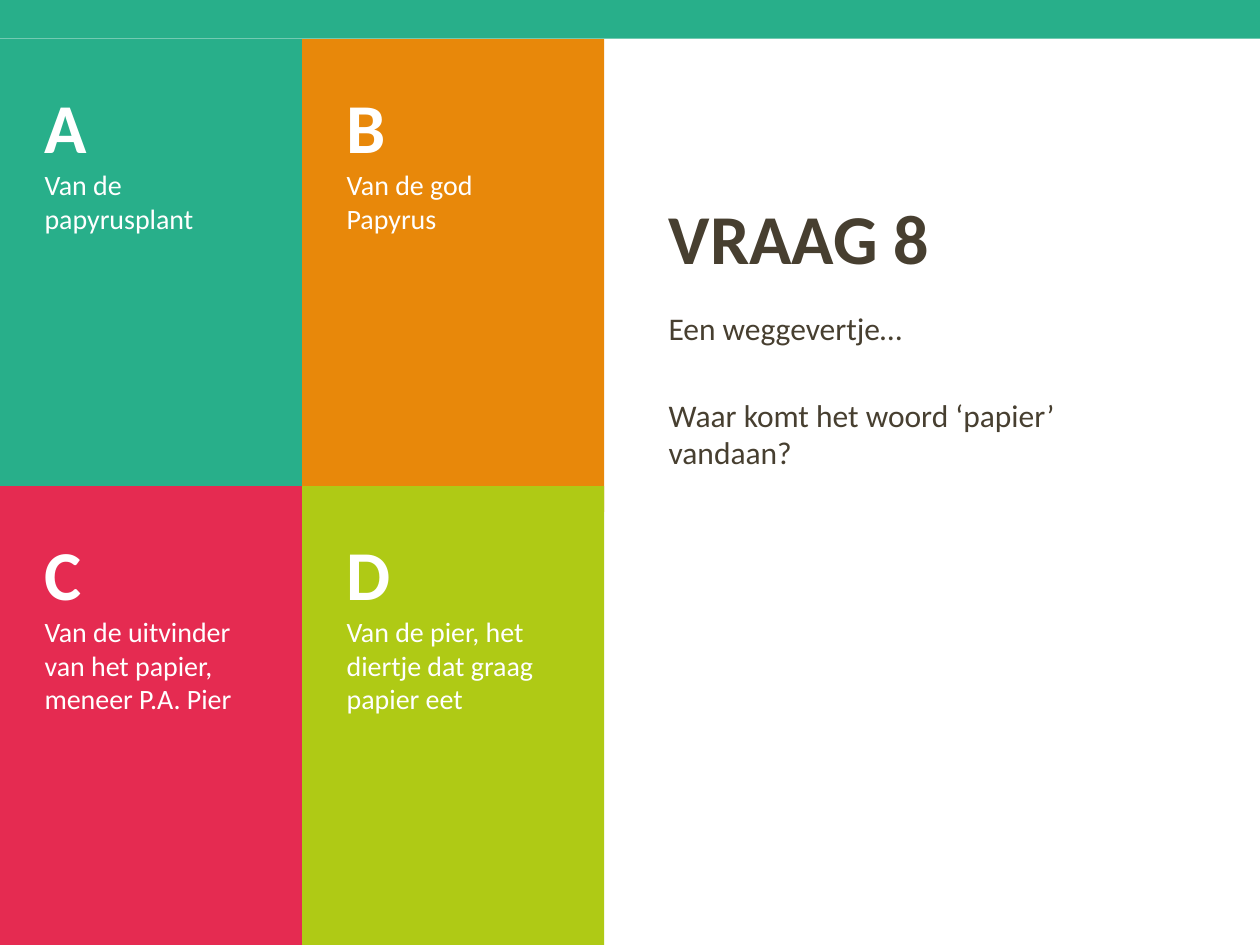
from dataclasses import dataclass

from pptx import Presentation
from pptx.dml.color import RGBColor
from pptx.enum.shapes import MSO_SHAPE
from pptx.enum.text import MSO_ANCHOR, PP_ALIGN
from pptx.util import Cm, Pt

RECTANGLE = MSO_SHAPE.RECTANGLE
TOP, BOTTOM = MSO_ANCHOR.TOP, MSO_ANCHOR.BOTTOM
LEFT = PP_ALIGN.LEFT
TITLE_ONLY = 5


@dataclass(frozen=True)
class Theme:
    """Colours, font and type sizes of the quiz."""

    font: str = "Calibri"
    ink: str = "473F30"
    white: str = "FFFFFF"
    green: str = "28AF8A"
    orange: str = "E8880A"
    red: str = "E52B51"
    lime: str = "AFCA15"
    heading: int = 40
    question: int = 18
    answer: int = 16


class QuizSlide:
    """Draws quiz elements on one slide in one theme."""

    def __init__(self, slide, theme):
        self.slide = slide
        self.theme = theme

    def set_text(self, para, text, size, color, bold=False):
        """Fill one left-aligned paragraph."""
        para.text = text
        para.alignment = LEFT
        para.font.name = self.theme.font
        para.font.size = Pt(size)
        para.font.bold = bold
        para.font.color.rgb = RGBColor.from_string(color)

    def title(self, text, left, top, width, height):
        """Place and format the title placeholder."""
        title = self.slide.shapes.title
        title.left, title.top = Cm(left), Cm(top)
        title.width, title.height = Cm(width), Cm(height)
        frame = title.text_frame
        frame.word_wrap = True
        frame.vertical_anchor = BOTTOM
        self.set_text(frame.paragraphs[0], text, self.theme.heading, self.theme.ink, True)

    def question(self, lines, left, top, width, height, gap):
        """Add the question text with a gap between its paragraphs."""
        box = self.slide.shapes.add_textbox(Cm(left), Cm(top), Cm(width), Cm(height))
        frame = box.text_frame
        frame.word_wrap = True
        for index, line in enumerate(lines):
            para = frame.add_paragraph() if index else frame.paragraphs[0]
            self.set_text(para, line, self.theme.question, self.theme.ink)
            para.space_before = Pt(gap if index else 0)

    def block(self, color, left, top, width, height):
        """Add a plain coloured rectangle."""
        block = self.slide.shapes.add_shape(
            RECTANGLE, Cm(left), Cm(top), Cm(width), Cm(height)
        )
        block.shadow.inherit = False
        block.fill.solid()
        block.fill.fore_color.rgb = RGBColor.from_string(color)
        block.line.fill.background()
        return block

    def answer(self, letter, text, color, left, top, width, height):
        """Add an answer tile with its letter above its text."""
        frame = self.block(color, left, top, width, height).text_frame
        frame.word_wrap = True
        frame.vertical_anchor = TOP
        frame.margin_left = frame.margin_right = Cm(0.9)
        frame.margin_top = frame.margin_bottom = Cm(0.9)
        white = self.theme.white
        self.set_text(frame.paragraphs[0], letter, self.theme.heading, white, True)
        self.set_text(frame.add_paragraph(), text, self.theme.answer, white)


def main():
    """Build and save the quiz slide."""
    theme = Theme()
    deck = Presentation()
    deck.slide_width, deck.slide_height = Cm(25.4), Cm(19.05)
    page = QuizSlide(deck.slides.add_slide(deck.slide_layouts[TITLE_ONLY]), theme)

    page.title("VRAAG 8", 13.23, 3.33, 10.87, 2.41)
    page.question(
        ["Een weggevertje…", "Waar komt het woord ‘papier’ vandaan?"],
        13.23, 6.1, 10.87, 6.32, gap=28,
    )

    tile_width = 6.09
    rows = [(0.79, 9.53), (9.8, 9.25)]
    answers = [
        ("A", "Van de papyrusplant", theme.green),
        ("B", "Van de god Papyrus", theme.orange),
        ("C", "Van de uitvinder van het papier, meneer P.A. Pier", theme.red),
        ("D", "Van de pier, het diertje dat graag papier eet", theme.lime),
    ]
    for index, (letter, text, color) in enumerate(answers):
        row, column = divmod(index, 2)
        top, height = rows[row]
        page.answer(letter, text, color, column * tile_width, top, tile_width, height)

    page.block(theme.green, 0, 0, 25.48, 0.78)
    deck.save("out.pptx")


if __name__ == "__main__":
    main()
